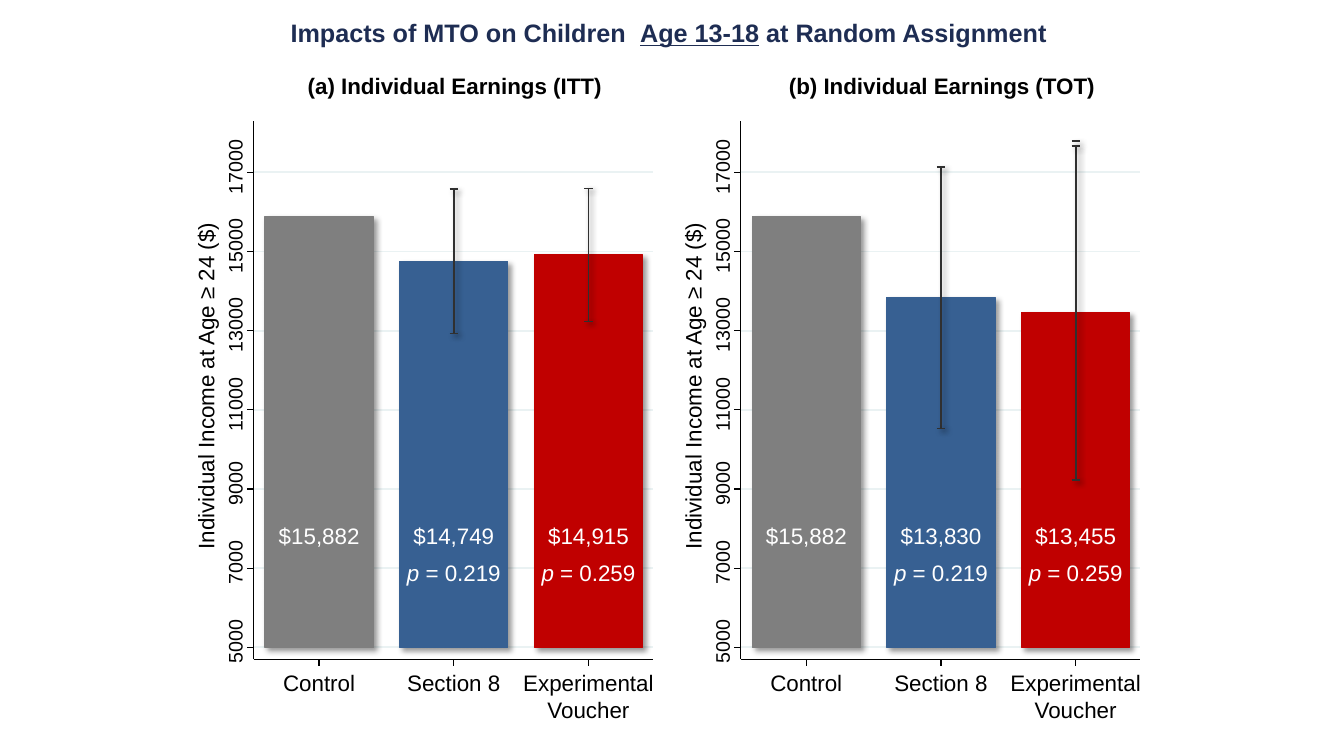
from dataclasses import dataclass

from lxml.etree import SubElement
from pptx import Presentation
from pptx.dml.color import RGBColor as Rgb
from pptx.enum.shapes import MSO_CONNECTOR as Connector, MSO_SHAPE as Shape
from pptx.enum.text import MSO_ANCHOR as Anchor, MSO_AUTO_SIZE as AutoSize, PP_ALIGN as Align
from pptx.oxml.ns import qn
from pptx.util import Pt


@dataclass(frozen=True)
class Theme:
    font: str = "Arial"
    ink: str = "000000"
    heading: str = "1E2D53"
    on_bar: str = "FFFFFF"
    grid: str = "EAF2F3"
    interval: str = "303030"
    control: str = "7F7F7F"
    section: str = "376092"
    voucher: str = "C00000"
    heading_size: float = 18
    label_size: float = 16
    tick_size: float = 14
    axis_width: float = 0.88
    rule_width: float = 1.25


@dataclass(frozen=True)
class Group:
    label: str
    color: str
    income: int
    p_value: str = ""
    interval: tuple = ()
    extra_caps: tuple = ()


@dataclass(frozen=True)
class Box:
    left: float
    top: float
    width: float
    height: float

    @property
    def bottom(self):
        return self.top + self.height

    @property
    def middle(self):
        return self.top + self.height / 2


THEME = Theme()
CONTROL = Group("Control", THEME.control, 15882)
PANELS = [
    ("(a) Individual Earnings (ITT)", Box(181.2, 86.6, 285.3, 384.3), [
        CONTROL,
        Group("Section 8", THEME.section, 14749, "0.219", (12930, 16570)),
        Group("Experimental\nVoucher", THEME.voucher, 14915, "0.259", (13230, 16590)),
    ]),
    ("(b) Individual Earnings (TOT)", Box(529.2, 86.6, 285.3, 384.3), [
        CONTROL,
        Group("Section 8", THEME.section, 13830, "0.219", (10530, 17130)),
        Group("Experimental\nVoucher", THEME.voucher, 13455, "0.259", (9230, 17670), (17790,)),
    ]),
]
AXIS_START, AXIS_END, AXIS_STEP = 5000, 17000, 2000
STEP_HEIGHT = 56.55
BASE_GAP = 8.5
BAR_INSET, BAR_PITCH, BAR_WIDTH = 8.1, 96.2, 77.3
TICK = 5
CAP = 2.9


def add_shadow(effects):
    shadow = SubElement(effects, qn("a:outerShdw"), blurRad=str(Pt(4)), dist=str(Pt(3)),
                        dir="2700000", algn="tl", rotWithShape="0")
    black = SubElement(shadow, qn("a:srgbClr"), val="000000")
    SubElement(black, qn("a:alpha"), val="40000")


def add_rule(slide, x1, y1, x2, y2, color, width, shadowed=False):
    rule = slide.shapes.add_connector(Connector.STRAIGHT, Pt(x1), Pt(y1), Pt(x2), Pt(y2))
    rule.line.color.rgb = Rgb.from_string(color)
    rule.line.width = Pt(width)
    effects = SubElement(rule._element.spPr, qn("a:effectLst"))
    if shadowed:
        add_shadow(effects)


def style(paragraph, size, color, bold=False, align=Align.CENTER):
    paragraph.alignment = align
    font = paragraph.font
    font.name, font.size, font.bold = THEME.font, Pt(size), bold
    font.color.rgb = Rgb.from_string(color)


def add_label(slide, text, center, top, width, height, size=THEME.label_size,
              color=THEME.ink, bold=False, rotation=0):
    """Centre a label at the given x; each line becomes a paragraph."""
    label = slide.shapes.add_textbox(Pt(center - width / 2), Pt(top), Pt(width), Pt(height))
    label.rotation = rotation
    frame = label.text_frame
    frame.margin_left = frame.margin_right = frame.margin_top = frame.margin_bottom = 0
    frame.word_wrap = False
    frame.text = text
    for paragraph in frame.paragraphs:
        style(paragraph, size, color, bold)
    return frame


def add_heading(slide, box):
    heading = slide.shapes.title
    heading.left, heading.top = Pt(box.left), Pt(box.top)
    heading.width, heading.height = Pt(box.width), Pt(box.height)
    frame = heading.text_frame
    frame.auto_size, frame.vertical_anchor = AutoSize.NONE, Anchor.TOP
    paragraph = frame.paragraphs[0]
    style(paragraph, THEME.heading_size, THEME.heading, bold=True)
    for text, underlined in (("Impacts of MTO on Children  ", False), ("Age 13-18", True),
                             (" at Random Assignment", False)):
        run = paragraph.add_run()
        run.text = text
        run.font.underline = underlined


def value_y(box, value):
    return box.bottom - BASE_GAP - (value - AXIS_START) / AXIS_STEP * STEP_HEIGHT


def bar_left(box, index):
    return box.left + BAR_INSET + index * BAR_PITCH


def axis_values():
    return range(AXIS_START, AXIS_END + 1, AXIS_STEP)


def add_gridlines(slide, box):
    for value in axis_values():
        y = value_y(box, value)
        add_rule(slide, box.left, y, box.left + box.width, y, THEME.grid, THEME.rule_width)


def add_bar(slide, box, index, group):
    top = value_y(box, group.income)
    bar = slide.shapes.add_shape(Shape.RECTANGLE, Pt(bar_left(box, index)), Pt(top),
                                 Pt(BAR_WIDTH), Pt(value_y(box, AXIS_START) - top))
    bar.fill.solid()
    bar.fill.fore_color.rgb = bar.line.color.rgb = Rgb.from_string(group.color)
    bar.line.width = Pt(0)
    bar.shadow.inherit = False
    add_shadow(bar._element.spPr.find(qn("a:effectLst")))


def add_interval(slide, box, center, group):
    """Draw the confidence interval and its end caps."""
    look = THEME.interval, THEME.rule_width, True
    if group.interval:
        low, high = (value_y(box, value) for value in group.interval)
        add_rule(slide, center, low, center, high, *look)
    for value in group.interval + group.extra_caps:
        y = value_y(box, value)
        add_rule(slide, center - CAP, y, center + CAP, y, *look)


def add_axes(slide, box, groups):
    look = THEME.ink, THEME.axis_width
    add_rule(slide, box.left, box.bottom, box.left, box.top, *look)
    add_rule(slide, box.left, box.bottom, box.left + box.width, box.bottom, *look)
    for value in axis_values():
        y = value_y(box, value)
        add_rule(slide, box.left, y, box.left - TICK, y, *look)
        add_label(slide, str(value), box.left - 13.4, y - 12.4, 54, 17,
                  THEME.tick_size, rotation=270)
    add_label(slide, "Individual Income at Age ≥ 24 ($)", box.left - 34.4,
              box.middle - 12.8, 250, 19.4, rotation=270)
    for index, group in enumerate(groups):
        center = bar_left(box, index) + BAR_WIDTH / 2
        add_rule(slide, center, box.bottom, center, box.bottom + TICK, *look)
        lines = group.label.count("\n") + 1
        add_label(slide, group.label, center, box.bottom + 7.2, 100, 19.4 * lines)


def add_bar_labels(slide, box, center, group):
    add_label(slide, f"${group.income:,}", center, box.bottom - 98, BAR_WIDTH, 19.4,
              color=THEME.on_bar)
    if group.p_value:
        frame = add_label(slide, "", center, box.bottom - 71.3, BAR_WIDTH, 19.4,
                          color=THEME.on_bar)
        for text, italic in (("p", True), (f" = {group.p_value}", False)):
            run = frame.paragraphs[0].add_run()
            run.text = text
            run.font.italic = italic


def add_panel(slide, title, box, groups):
    add_gridlines(slide, box)
    for index, group in enumerate(groups):
        add_bar(slide, box, index, group)
    add_axes(slide, box, groups)
    for index, group in enumerate(groups):
        center = bar_left(box, index) + BAR_WIDTH / 2
        add_interval(slide, box, center, group)
        add_bar_labels(slide, box, center, group)
    add_label(slide, title, box.left + box.width / 2 + 1, box.top - 34.8, 240, 19.4, bold=True)


def main():
    deck = Presentation()
    deck.slide_width, deck.slide_height = Pt(960), Pt(540)
    slide = deck.slides.add_slide(deck.slide_layouts[5])
    add_heading(slide, Box(117.6, 9, 720, 29))
    for title, box, groups in PANELS:
        add_panel(slide, title, box, groups)
    deck.save("out.pptx")


if __name__ == "__main__":
    main()
